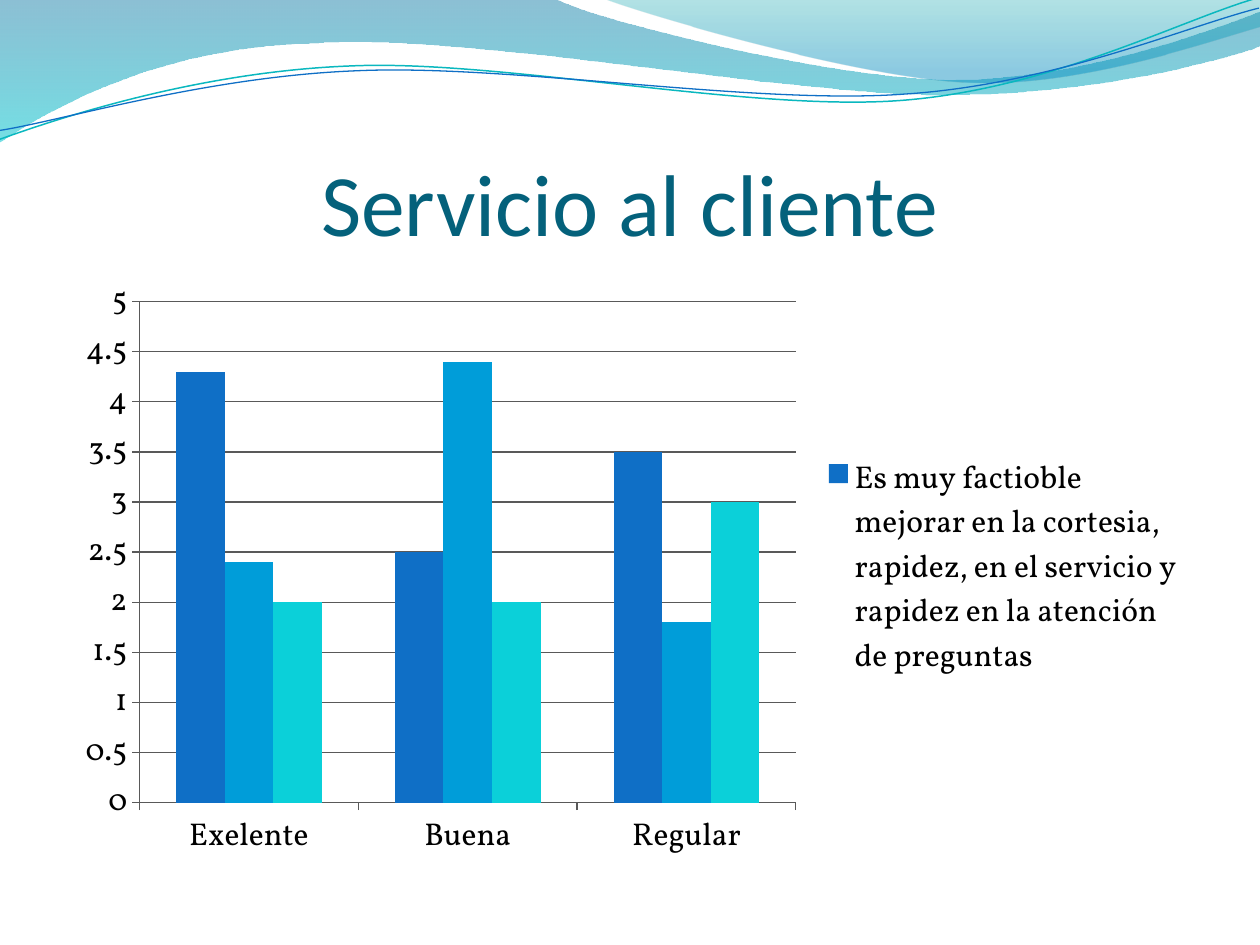
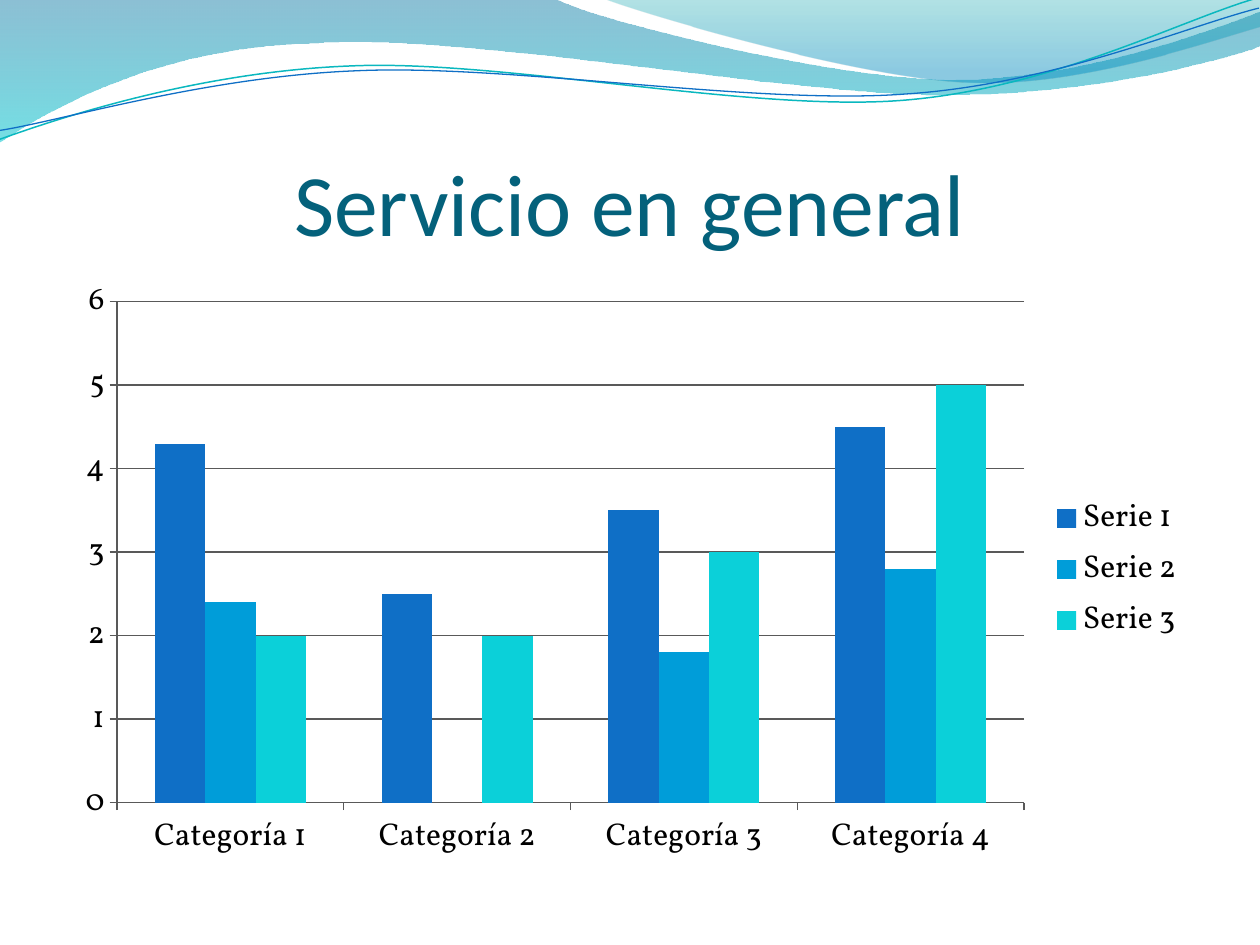
import pptx
import pptx.chart.data
import pptx.dml.color
import pptx.enum.chart
import pptx.enum.text
import pptx.oxml
import pptx.oxml.ns
import pptx.util
from lxml import etree
from pptx.oxml.ns import qn
from pptx.util import Inches, Pt

TITLE_COLOR = "04617B"
SERIES_COLORS = ["0F6FC6", "009DD9", "0BD0D9"]
GRID_COLOR = "595959"
TITLE_FONT, CHART_FONT = "Calibri", "Vollkorn"
THREAD_ROTATION = 357.3


def rgb(hex_color):
    return pptx.dml.color.RGBColor.from_string(hex_color)


def trace(shapes, start, segments, closed):
    """Draw an outline in inches; a segment is a line (1 point) or a Bezier curve (3 points)."""
    builder = shapes.build_freeform(Inches(start[0]), Inches(start[1]))
    vertices = [(Inches(x), Inches(y)) for segment in segments for x, y in segment]
    builder.add_line_segments(vertices, close=closed)
    outline = builder.convert_to_shape()
    outline.shadow.inherit = False
    steps = iter(list(outline.element.iter(qn("a:lnTo"))))
    for segment in segments:
        parts = [next(steps) for point in segment]
        if len(segment) == 3:
            curve = etree.Element(qn("a:cubicBezTo"))
            parts[0].addprevious(curve)
            for part in parts:
                curve.append(part[0])
                part.getparent().remove(part)
    return outline


# Each band: start, segments, gradient stops (position, colour, opacity in percent)
bands = [
    ((0, 0),
     [[(4.4, -0.01)],
      [(4.76, 0.17), (6.64, 0.63), (7.58, 0.63)],
      [(8.53, 0.63), (9.58, 0.26), (10, 0.09)],
      [(10.01, 0.36)],
      [(9.83, 0.44), (8.7, 0.76), (7.46, 0.75)],
      [(6.22, 0.75), (3.82, 0.28), (2.57, 0.34)],
      [(1.29, 0.36), (0.46, 0.83), (-0.01, 1.13)],
      [(0, 0)]],
     [(0, "0074A1", 45), (1, "00C6CF", 55)]),
    ((4.79, -0.01),
     [[(5.09, 0.11), (6.82, 0.62), (7.69, 0.65)],
      [(8.56, 0.69), (9.61, 0.32), (10, 0.21)],
      [(10, 0)],
      [(4.79, -0.01)]],
     [(0, "00A1A9", 30), (0.8, "008BBF", 45)]),
]
# Each thread, before its rotation: start, segments, colour, width in points
threads = [
    ((-0.02, 0.87),
     [[(0.47, 0.72), (1.58, 0.41), (2.78, 0.42)],
      [(3.96, 0.42), (5.91, 0.93), (7.12, 0.9)],
      [(8.32, 0.87), (9.4, 0.36), (10, 0.22)]],
     "0AB8BF", 0.85),
    ((-0.02, 0.8),
     [[(0.46, 0.75), (1.64, 0.45), (2.83, 0.46)],
      [(4.03, 0.46), (5.96, 0.88), (7.16, 0.85)],
      [(8.35, 0.83), (9.42, 0.42), (10.01, 0.3)]],
     "0F6FC6", 0.75),
]

surveys = [
    {"title": "Servicio al cliente",
     "categories": ["Exelente", "Buena", "Regular"],
     "series": [("Es muy factioble mejorar en la cortesia, rapidez, en el servicio y "
                 "rapidez en la atención de preguntas", [4.3, 2.5, 3.5]),
                ("Series 2", [2.4, 4.4, 1.8]),
                ("Series 3", [2, 2, 3])],
     "hidden_entries": [1, 2], "maximum": 5, "unit": 0.5},
    {"title": "Servicio en general",
     "categories": [f"Categoría {n}" for n in range(1, 5)],
     "series": [("Serie 1", [4.3, 2.5, 3.5, 4.5]),
                ("Serie 2", [2.4, None, 1.8, 2.8]),
                ("Serie 3", [2, 2, 3, 5])],
     "hidden_entries": [], "maximum": 6, "unit": 1},
]

deck = pptx.Presentation()
deck.slide_width, deck.slide_height = Inches(10), Inches(7.5)
title_only = deck.slide_layouts[5]
slides = [deck.slides.add_slide(title_only) for survey in surveys]

# The waves are drawn once and moved to the master, behind its placeholders
waves = []
for start, segments, stops in bands:
    band = trace(slides[0].shapes, start, segments, True)
    band.fill.gradient()
    band.fill.gradient_angle = 270
    for stop, (position, color, opacity) in zip(band.fill.gradient_stops, stops):
        stop.position = position
        stop.color.rgb = rgb(color)
    for color_node, (_, _, opacity) in zip(band.element.iter(qn("a:srgbClr")), stops):
        etree.SubElement(color_node, qn("a:alpha"), val=str(opacity * 1000))
    band.line.fill.background()
    waves.append(band)
strands = []
for start, segments, color, width in threads:
    strand = trace(slides[0].shapes, start, segments, False)
    strand.rotation = THREAD_ROTATION
    strand.fill.background()
    strand.line.color.rgb = rgb(color)
    strand.line.width = Pt(width)
    strands.append(strand)
waves.append(slides[0].shapes.add_group_shape(strands))
for position, wave in enumerate(waves, start=2):
    deck.slide_master.shapes.element.insert(position, wave.element)

for slide, survey in zip(slides, surveys):
    title = slide.shapes.title
    title.left, title.top, title.width, title.height = map(Inches, (0.5, 0.77, 9, 1.25))
    heading = title.text_frame
    heading.text = survey["title"]
    heading.auto_size = pptx.enum.text.MSO_AUTO_SIZE.NONE
    heading.vertical_anchor = pptx.enum.text.MSO_ANCHOR.BOTTOM
    heading.margin_left = heading.margin_right = heading.margin_bottom = 0
    heading.margin_top = Inches(0.05)
    heading.paragraphs[0].alignment = pptx.enum.text.PP_ALIGN.CENTER
    heading_font = heading.paragraphs[0].runs[0].font
    heading_font.name, heading_font.size = TITLE_FONT, Pt(50)
    heading_font.color.rgb = rgb(TITLE_COLOR)

    ratings = pptx.chart.data.CategoryChartData()
    ratings.categories = survey["categories"]
    for name, values in survey["series"]:
        ratings.add_series(name, values)
    chart = slide.shapes.add_chart(
        pptx.enum.chart.XL_CHART_TYPE.COLUMN_CLUSTERED,
        Inches(0.5), Inches(2.12), Inches(9), Inches(4.8), ratings).chart
    chart.has_title = False
    chart.font.name, chart.font.size = CHART_FONT, Pt(18)
    chart.font.color.rgb = rgb("000000")

    columns = chart.plots[0]
    columns.gap_width, columns.overlap = 150, 0
    columns.vary_by_categories = False
    for series, color in zip(columns.series, SERIES_COLORS):
        series.format.fill.solid()
        series.format.fill.fore_color.rgb = rgb(color)
        series.invert_if_negative = False

    scale = chart.value_axis
    scale.minimum_scale, scale.maximum_scale = 0, survey["maximum"]
    scale.major_unit = survey["unit"]
    scale.has_major_gridlines = True
    for axis in (scale, chart.category_axis):
        axis.major_tick_mark = pptx.enum.chart.XL_TICK_MARK.OUTSIDE
    for rule in (scale, chart.category_axis, scale.major_gridlines):
        rule.format.line.color.rgb = rgb(GRID_COLOR)
        rule.format.line.width = Pt(0.75)

    chart.has_legend = True
    chart.legend.position = pptx.enum.chart.XL_LEGEND_POSITION.RIGHT
    chart.legend.include_in_layout = False
    legend_node = next(chart.element.iter(qn("c:legend")))
    for offset, index in enumerate(survey["hidden_entries"], start=1):
        entry = pptx.oxml.parse_xml(
            f'<c:legendEntry {pptx.oxml.ns.nsdecls("c")}>'
            f'<c:idx val="{index}"/><c:delete val="1"/></c:legendEntry>')
        legend_node.insert(offset, entry)

deck.save("out.pptx")
